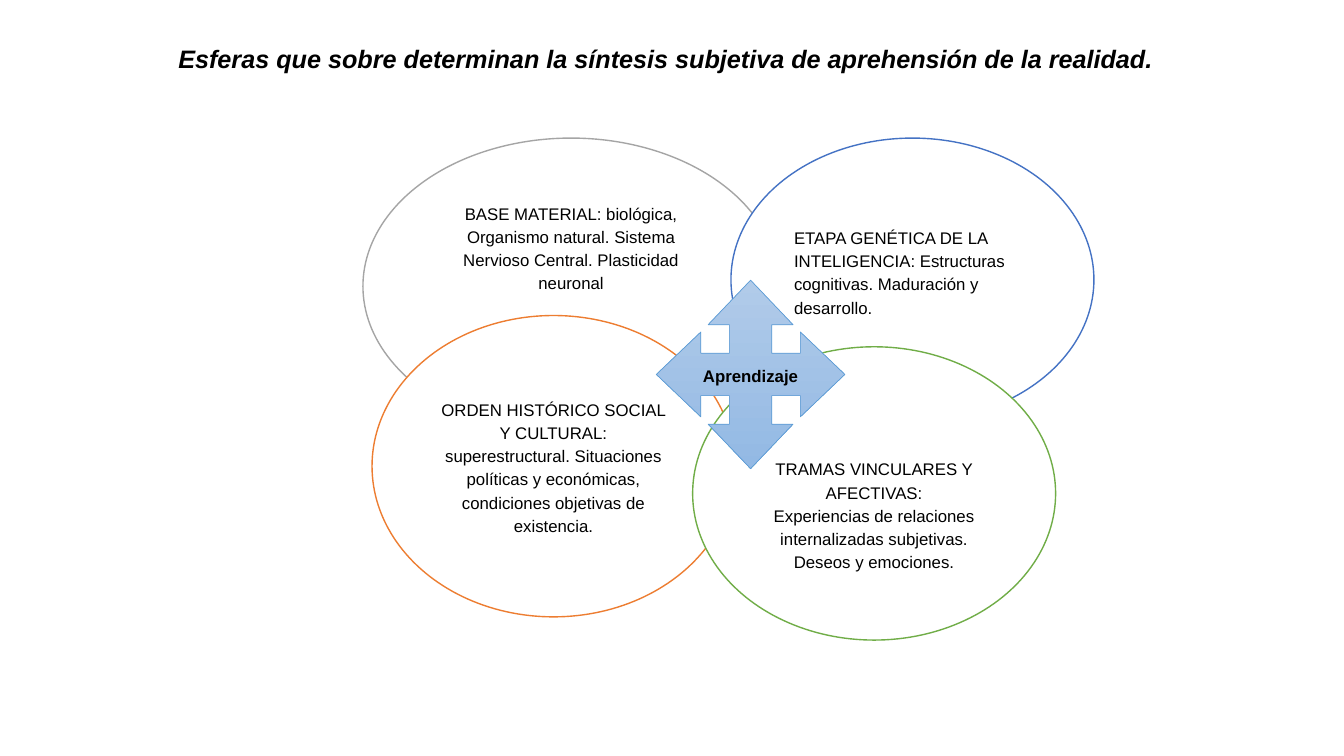
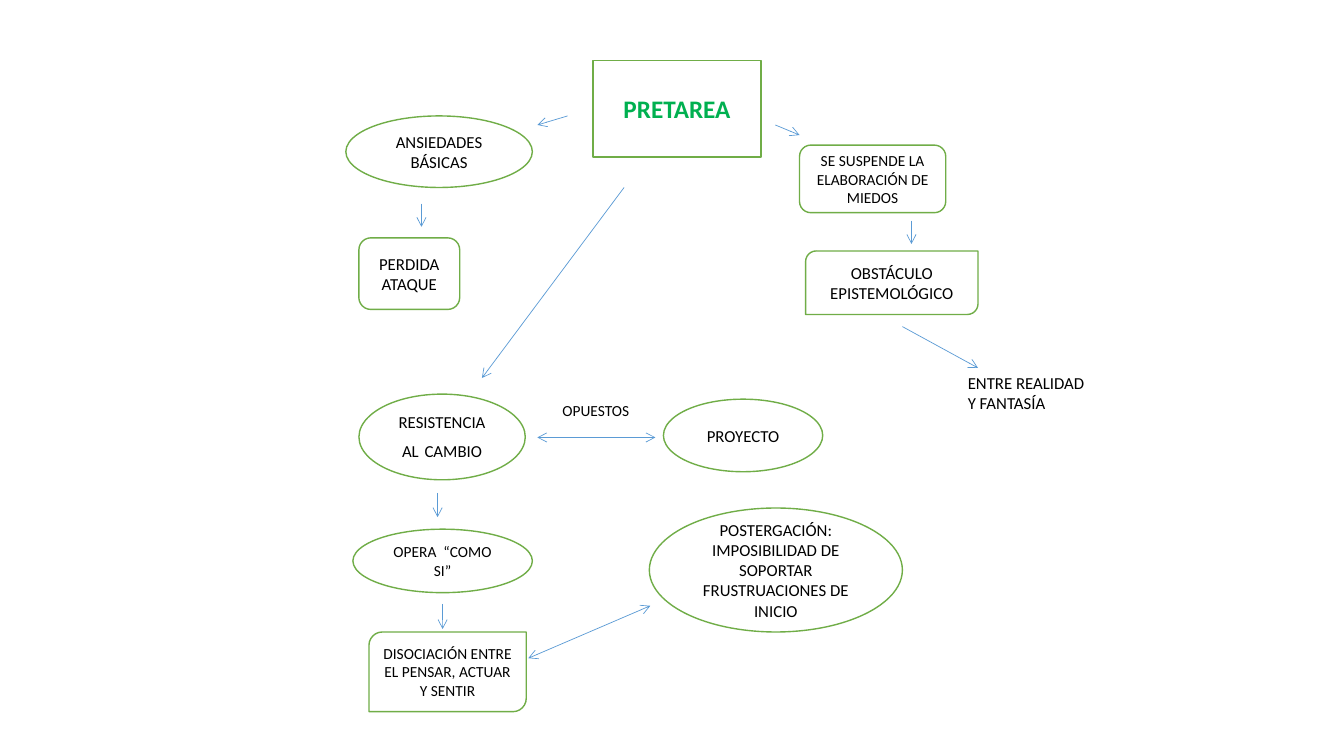
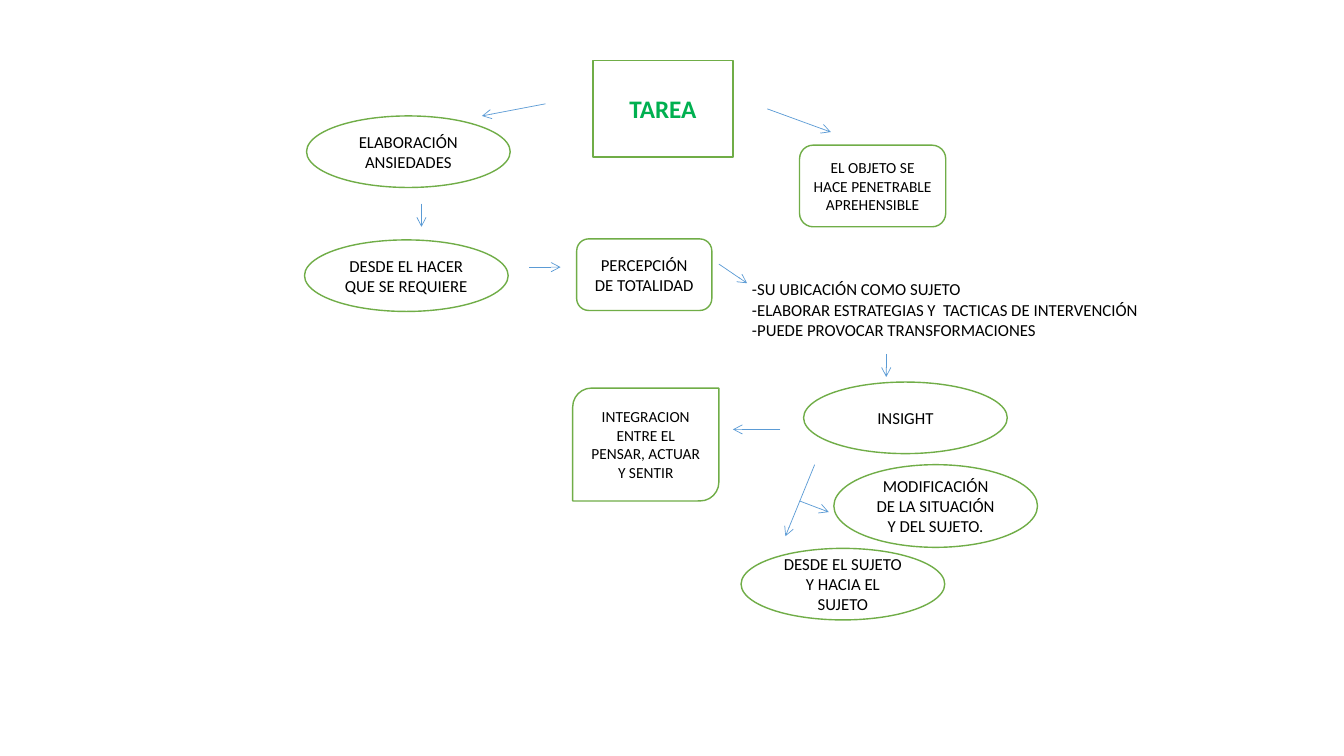
from lxml import etree
from pptx import Presentation
from pptx.dml.color import RGBColor
from pptx.enum.shapes import MSO_CONNECTOR, MSO_SHAPE
from pptx.enum.text import MSO_ANCHOR, MSO_AUTO_SIZE, PP_ALIGN
from pptx.oxml.ns import qn
from pptx.util import Inches, Pt

BLACK = RGBColor(0x00, 0x00, 0x00)
WHITE = RGBColor(0xFF, 0xFF, 0xFF)
GRAY = RGBColor(0xA5, 0xA5, 0xA5)
BLUE = RGBColor(0x44, 0x72, 0xC4)
ORANGE = RGBColor(0xED, 0x7D, 0x31)
GREEN = RGBColor(0x70, 0xAD, 0x47)
HEADING = RGBColor(0x00, 0xB0, 0x50)
ARROW = RGBColor(0x5B, 0x9B, 0xD5)
ARROW_TOP = RGBColor(0xB1, 0xCB, 0xE9)
ARROW_BOTTOM = RGBColor(0x93, 0xB9, 0xE4)

OVAL = MSO_SHAPE.OVAL
RECT = MSO_SHAPE.RECTANGLE
ROUNDED = MSO_SHAPE.ROUNDED_RECTANGLE
DIAGONAL = MSO_SHAPE.ROUND_2_DIAG_RECTANGLE
QUAD_ARROW = MSO_SHAPE.QUAD_ARROW
STRAIGHT = MSO_CONNECTOR.STRAIGHT
LEFT, CENTER = PP_ALIGN.LEFT, PP_ALIGN.CENTER
MIDDLE, TOP = MSO_ANCHOR.MIDDLE, MSO_ANCHOR.TOP
GROW = MSO_AUTO_SIZE.SHAPE_TO_FIT_TEXT

TITLE = "Esferas que sobre determinan la síntesis subjetiva de aprehensión de la realidad."
SPHERES = [
    ((3.6, 1.37, 4.13, 2.94), GRAY, CENTER, 0.05, 0.83,
     ["BASE MATERIAL: biológica,",
      "Organismo natural. Sistema Nervioso Central. Plasticidad neuronal"]),
    ((7.25, 1.37, 3.6, 2.81), BLUE, LEFT, 0.05, 0.22,
     ["ETAPA GENÉTICA DE LA INTELIGENCIA: Estructuras cognitivas. Maduración y desarrollo."]),
    ((3.69, 3.13, 3.6, 2.99), ORANGE, CENTER, 0.05, 0.05,
     ["ORDEN HISTÓRICO SOCIAL Y CULTURAL: superestructural. Situaciones políticas "
      "y económicas, condiciones objetivas de existencia."]),
    ((6.87, 3.44, 3.6, 2.91), GREEN, CENTER, 0.46, 0.05,
     ["TRAMAS VINCULARES Y AFECTIVAS:",
      "Experiencias de relaciones internalizadas subjetivas. Deseos y emociones."]),
]

PRETAREA = {
    "heading": ((5.88, 0.6, 1.67, 0.96), "PRETAREA"),
    "nodes": [
        (OVAL, (3.43, 1.15, 1.85, 0.71), 12, ["ANSIEDADES BÁSICAS"]),
        (OVAL, (3.56, 3.91, 1.65, 0.85), 12,
         [[("RESISTENCIA AL", 12), (" ", 18), ("CAMBIO", 12)]]),
        (ROUNDED, (3.56, 2.36, 1, 0.71), 12, ["PERDIDA", "ATAQUE"]),
        (ROUNDED, (7.93, 1.44, 1.45, 0.67), 11, ["SE SUSPENDE LA ELABORACIÓN DE MIEDOS"]),
        (DIAGONAL, (7.99, 2.49, 1.71, 0.63), 12, ["OBSTÁCULO EPISTEMOLÓGICO"]),
        (OVAL, (6.58, 3.96, 1.58, 0.72), 12, ["PROYECTO"]),
        (OVAL, (3.5, 5.25, 1.78, 0.63), 11, ["OPERA  “COMO SI”"]),
        (DIAGONAL, (3.66, 6.27, 1.56, 0.79), 11,
         ["DISOCIACIÓN ENTRE EL PENSAR, ACTUAR Y SENTIR"]),
        (OVAL, (6.44, 5.04, 2.51, 1.23), 12,
         ["POSTERGACIÓN:", "IMPOSIBILIDAD DE SOPORTAR FRUSTRUACIONES DE INICIO"]),
    ],
    "labels": [
        ((9.5, 3.65, 1.41, 0.5), 12, ["ENTRE REALIDAD", "Y FANTASÍA"]),
        ((5.48, 3.93, 0.87, 0.29), 11, ["OPUESTOS"]),
    ],
    "arrows": [
        (5.63, 1.15, 5.33, 1.24), (7.69, 1.24, 7.93, 1.34),
        (4.18, 2.02, 4.18, 2.25), (9.04, 2.19, 9.04, 2.42),
        (8.95, 3.24, 9.7, 3.65), (4.34, 4.89, 4.34, 5.13),
        (6.19, 1.86, 4.78, 3.75), (4.39, 5.99, 4.39, 6.24),
    ],
    "double_arrows": [(5.33, 4.34, 6.5, 4.34), (5.24, 6.53, 6.45, 6.01)],
}

TAREA = {
    "heading": ((5.88, 0.6, 1.39, 0.96), "TAREA"),
    "nodes": [
        (OVAL, (3.04, 1.15, 2.02, 0.71), 12, ["ELABORACIÓN ANSIEDADES"]),
        (ROUNDED, (7.93, 1.44, 1.45, 0.81), 11, ["EL OBJETO SE HACE PENETRABLE APREHENSIBLE"]),
        (OVAL, (3.02, 2.38, 2.02, 0.71), 12, ["DESDE EL HACER QUE SE REQUIERE"]),
        (ROUNDED, (5.72, 2.37, 1.34, 0.71), 12, ["PERCEPCIÓN DE TOTALIDAD"]),
        (OVAL, (7.97, 3.79, 2.02, 0.71), 12, ["INSIGHT"]),
        (DIAGONAL, (5.68, 3.85, 1.45, 1.12), 11,
         ["INTEGRACION ENTRE EL PENSAR, ACTUAR Y SENTIR"]),
        (OVAL, (8.27, 4.61, 2.02, 0.82), 12, ["MODIFICACIÓN DE LA SITUACIÓN Y DEL SUJETO."]),
        (OVAL, (7.35, 5.44, 2.02, 0.71), 12, ["DESDE EL SUJETO Y HACIA EL SUJETO"]),
    ],
    "labels": [
        ((7.36, 2.72, 4.08, 0.71), 12,
         ["-SU UBICACIÓN COMO SUJETO",
          "-ELABORAR ESTRATEGIAS Y  TACTICAS DE INTERVENCIÓN",
          "-PUEDE PROVOCAR TRANSFORMACIONES"]),
    ],
    "arrows": [
        (4.18, 2.02, 4.18, 2.25), (7.61, 1.08, 8.24, 1.31),
        (5.41, 1.03, 4.78, 1.15), (7.13, 2.62, 7.41, 2.81),
        (5.25, 2.65, 5.56, 2.65), (8.79, 3.51, 8.79, 3.74),
        (7.74, 4.26, 7.27, 4.26), (8.08, 4.61, 7.79, 5.32),
        (7.93, 4.97, 8.22, 5.08),
    ],
    "double_arrows": [],
}


def write(sp, paras, size=12, font="Calibri", color=BLACK, bold=False, italic=False,
          align=CENTER, anchor=MIDDLE, spacing=None, wrap=True):
    tf = sp.text_frame
    tf.word_wrap = wrap
    tf.vertical_anchor = anchor
    for i, para in enumerate(paras):
        p = tf.paragraphs[0] if i == 0 else tf.add_paragraph()
        p.alignment = align
        if spacing:
            p.line_spacing = spacing
        for text, run_size in [(para, size)] if isinstance(para, str) else para:
            r = p.add_run()
            r.text = text
            r.font.name = font
            r.font.size = Pt(run_size)
            r.font.bold = bold
            r.font.italic = italic
            r.font.color.rgb = color


def add_node(s, kind, box, line=GREEN, width=1):
    sp = s.shapes.add_shape(kind, *map(Inches, box))
    sp.shadow.inherit = False
    sp.fill.solid()
    sp.fill.fore_color.rgb = WHITE
    sp.line.color.rgb = line
    sp.line.width = Pt(width)
    return sp


def add_arrow(s, points, ends=("tailEnd",)):
    c = s.shapes.add_connector(STRAIGHT, *map(Inches, points))
    c.line.color.rgb = ARROW
    c.line.width = Pt(0.5)
    spPr = c.element.spPr
    for end in ends:
        etree.SubElement(spPr.find(qn("a:ln")), qn("a:" + end), type="arrow")
    etree.SubElement(spPr, qn("a:effectLst"))


def build_spheres(s):
    for box, line, align, top, bottom, paras in SPHERES:
        sp = add_node(s, OVAL, box, line)
        sp.text_frame.margin_top = Inches(top)
        sp.text_frame.margin_bottom = Inches(bottom)
        write(sp, paras, font="Arial", align=align, spacing=1.15)

    hub = add_node(s, QUAD_ARROW, (6.51, 2.78, 1.87, 1.87), ARROW, 0.5)
    for i, value in enumerate((0.225, 0.225, 0.236)):
        hub.adjustments[i] = value
    hub.fill.gradient()
    hub.fill.gradient_angle = 270
    for stop, color in zip(hub.fill.gradient_stops, (ARROW_TOP, ARROW_BOTTOM)):
        stop.color.rgb = color
    write(hub, ["Aprendizaje"], font="Arial", bold=True, spacing=1.15)

    title = s.shapes.add_textbox(*map(Inches, (1.67, 0.35, 10, 0.45)))
    write(title, [TITLE], 18, "Arial", bold=True, italic=True, align=LEFT)


def build_map(s, content):
    box, heading = content["heading"]
    write(add_node(s, RECT, box), [heading], 18, color=HEADING, bold=True)
    for kind, box, size, paras in content["nodes"]:
        write(add_node(s, kind, box), paras, size)
    for box, size, paras in content["labels"]:
        label = s.shapes.add_textbox(*map(Inches, box))
        write(label, paras, size, align=LEFT, anchor=TOP, wrap=False)
        label.text_frame.auto_size = GROW
    for points in content["arrows"]:
        add_arrow(s, points)
    for points in content["double_arrows"]:
        add_arrow(s, points, ("headEnd", "tailEnd"))


def main():
    prs = Presentation()
    prs.slide_width = Inches(13.33)
    prs.slide_height = Inches(7.5)
    blank = prs.slide_layouts[6]
    build_spheres(prs.slides.add_slide(blank))
    for content in (PRETAREA, TAREA):
        build_map(prs.slides.add_slide(blank), content)
    prs.save("out.pptx")


if __name__ == "__main__":
    main()
